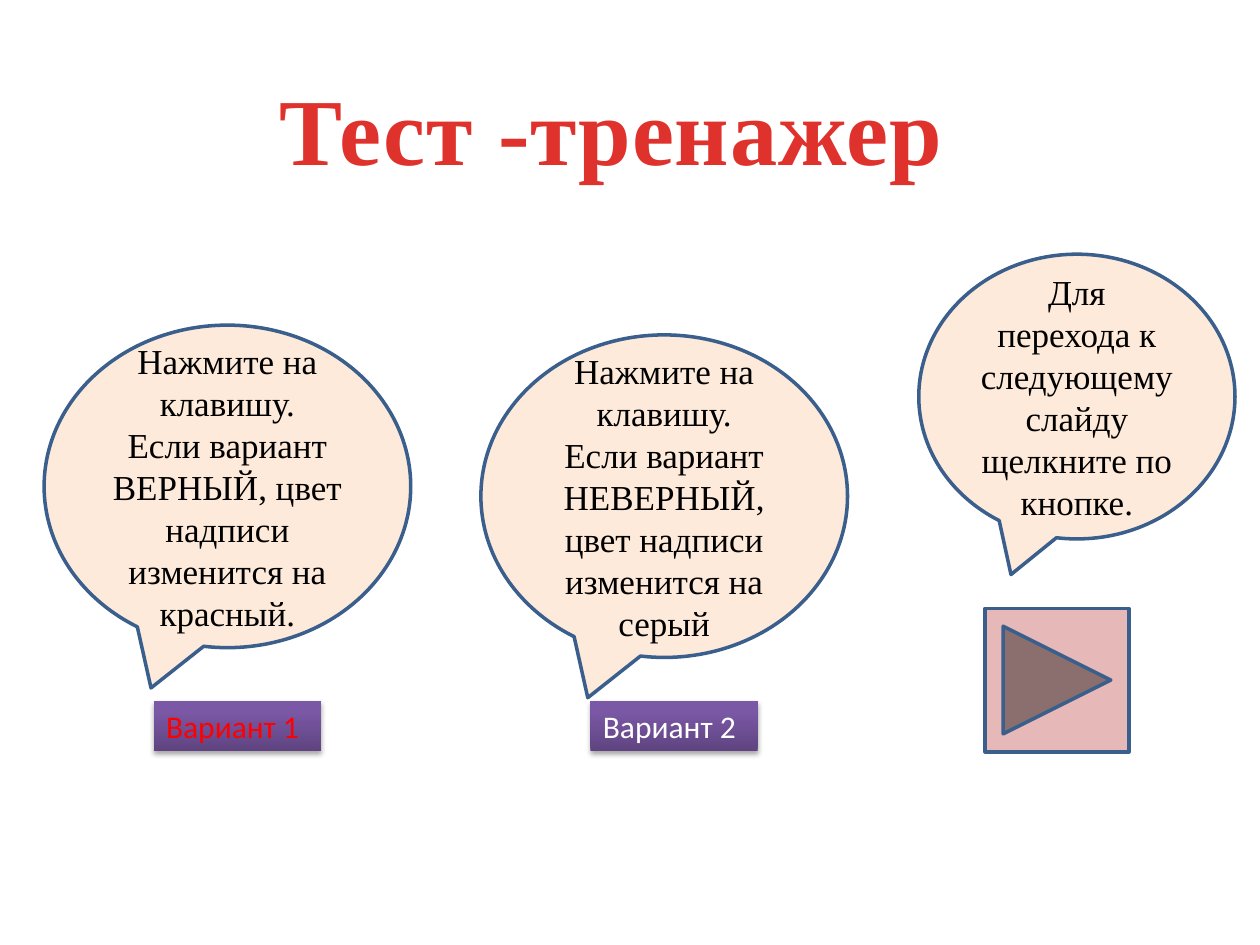
from dataclasses import dataclass

from lxml import etree
from pptx import Presentation
from pptx.dml.color import RGBColor
from pptx.enum.shapes import MSO_SHAPE
from pptx.enum.text import MSO_ANCHOR, MSO_AUTO_SIZE, PP_ALIGN
from pptx.oxml.ns import nsdecls, qn
from pptx.util import Pt

CALLOUT = MSO_SHAPE.OVAL_CALLOUT
RECTANGLE = MSO_SHAPE.RECTANGLE
NEXT_BUTTON = MSO_SHAPE.ACTION_BUTTON_FORWARD_OR_NEXT
TOP, MIDDLE = MSO_ANCHOR.TOP, MSO_ANCHOR.MIDDLE
LEFT, CENTER = PP_ALIGN.LEFT, PP_ALIGN.CENTER
NO_FIT, GROW = MSO_AUTO_SIZE.NONE, MSO_AUTO_SIZE.SHAPE_TO_FIT_TEXT
TITLE_ONLY = 5


@dataclass(frozen=True)
class Theme:
    serif: str = "Times New Roman"
    sans: str = "Calibri"
    title_size: float = 54
    hint_size: float = 20
    option_size: float = 18
    title: str = "E0322D"
    hint_text: str = "000000"
    hint_fill: str = "FDEADA"
    outline: str = "3A5F8C"
    outline_width: float = 2
    next_fill: str = "E6B9B8"
    right_option: str = "FF0000"
    wrong_option: str = "FFFFFF"
    option_stops: tuple = ((0, "5F4480"), (80, "7B58A6"), (100, "7C57A8"))


THEME = Theme()


def write(shape, *paragraphs, font, size, color, bold=False, spacing=None,
          align=CENTER, anchor=MIDDLE, wrap=True, fit=NO_FIT):
    """Fill a shape with paragraphs in one format."""
    frame = shape.text_frame
    frame.word_wrap = wrap
    frame.auto_size = fit
    frame.vertical_anchor = anchor
    for index, text in enumerate(paragraphs):
        paragraph = frame.add_paragraph() if index else frame.paragraphs[0]
        paragraph.alignment = align
        run = paragraph.add_run()
        run.text = text
        run.font.name = font
        run.font.size = Pt(size)
        run.font.bold = bold
        run.font.color.rgb = RGBColor.from_string(color)
        if spacing is not None:
            run.font._element.set("spc", str(round(spacing * 100)))


def add_outlined(slide, kind, box, fill):
    shape = slide.shapes.add_shape(kind, *map(Pt, box))
    shape.shadow.inherit = False
    shape.fill.solid()
    shape.fill.fore_color.rgb = RGBColor.from_string(fill)
    shape.line.color.rgb = RGBColor.from_string(THEME.outline)
    shape.line.width = Pt(THEME.outline_width)
    return shape


def style_option(shape):
    """Give an answer button its three-stop gradient and soft shadow."""
    shape.line.fill.background()
    shape.shadow.inherit = False
    stops = "".join(
        f'<a:gs pos="{position * 1000}"><a:srgbClr val="{color}"/></a:gs>'
        for position, color in THEME.option_stops)
    gradient = etree.fromstring(
        f'<a:gradFill {nsdecls("a")} rotWithShape="1"><a:gsLst>{stops}</a:gsLst>'
        '<a:lin ang="16200000" scaled="0"/></a:gradFill>')
    shadow = etree.fromstring(
        f'<a:outerShdw {nsdecls("a")} blurRad="{Pt(3.1)}" dist="{Pt(1.8)}" '
        'dir="5400000" rotWithShape="0"><a:srgbClr val="000000">'
        '<a:alpha val="35000"/></a:srgbClr></a:outerShdw>')
    properties = shape._element.spPr
    properties.find(qn("a:prstGeom")).addnext(gradient)
    properties.find(qn("a:effectLst")).append(shadow)


def add_title(slide, box, text):
    title = slide.shapes.title
    title.left, title.top, title.width, title.height = map(Pt, box)
    write(title, text, font=THEME.serif, size=THEME.title_size,
          color=THEME.title, bold=True, spacing=0.5, anchor=TOP, wrap=False,
          fit=GROW)


def add_hint(slide, box, *paragraphs):
    hint = add_outlined(slide, CALLOUT, box, THEME.hint_fill)
    write(hint, *paragraphs, font=THEME.serif, size=THEME.hint_size,
          color=THEME.hint_text)


def add_answer(slide, box, hint_top, label, label_color, *hint):
    """Place an answer button at the foot of the box, its hint above."""
    left, top, width, height = box
    option_height = 29
    option = slide.shapes.add_shape(
        RECTANGLE, Pt(left + 62.6), Pt(top + height - option_height),
        Pt(95.6), Pt(option_height))
    style_option(option)
    write(option, label, font=THEME.sans, size=THEME.option_size,
          color=label_color, align=LEFT, anchor=TOP, wrap=False, fit=GROW)
    add_hint(slide, (left, top + hint_top, width, 184.3), *hint)


def add_next(slide, box, hint):
    """Place the next-slide button at the foot of the box, its hint above."""
    left, top, width, height = box
    side = 82
    add_outlined(slide, NEXT_BUTTON,
                 (left + 38, top + height - side, side, side), THEME.next_fill)
    add_hint(slide, (left, top, width, 162.7), hint)


def main():
    presentation = Presentation()
    presentation.slide_width, presentation.slide_height = Pt(720), Pt(540)
    slide = presentation.slides.add_slide(
        presentation.slide_layouts[TITLE_ONLY])

    add_title(slide, (150.5, 36.7, 397.5, 72.7), "Тест -тренажер")

    # Answer buttons with their hints
    answers = (
        (25.2, 0, "Вариант 1", THEME.right_option, "ВЕРНЫЙ",
         "красный."),
        (274.8, 5.6, "Вариант 2", THEME.wrong_option, "НЕВЕРНЫЙ",
         "серый"),
    )
    for left, hint_top, label, color, verdict, new_color in answers:
        add_answer(slide, (left, 185.8, 209.5, 243.5), hint_top, label, color,
                   "Нажмите на клавишу.",
                   f"Если вариант {verdict}, цвет надписи изменится на {new_color}")

    # Step to the next slide
    add_next(slide, (525, 145.3, 180.7, 284.3),
             "Для перехода к следующему слайду щелкните по кнопке.")

    presentation.save("out.pptx")


if __name__ == "__main__":
    main()
